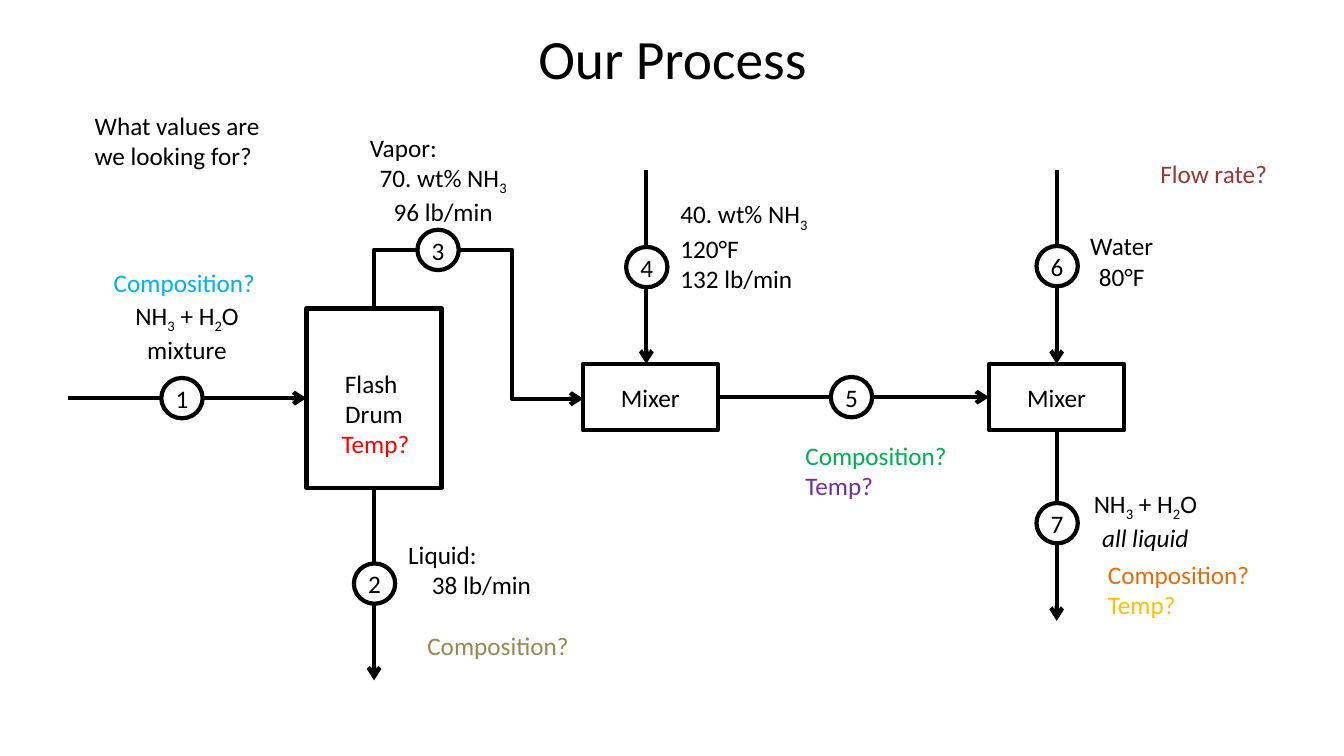
from dataclasses import dataclass
from typing import Any, NamedTuple, Optional

from lxml.etree import SubElement
from pptx import Presentation
from pptx.dml.color import RGBColor
from pptx.enum.shapes import MSO_CONNECTOR as Connector, MSO_SHAPE as Preset
from pptx.enum.text import MSO_ANCHOR as Anchor, MSO_AUTO_SIZE as AutoSize, PP_ALIGN as Align
from pptx.oxml.ns import qn
from pptx.util import Emu, Pt

EMU_PER_PX = 9144


@dataclass(frozen=True)
class Theme:
    font: str = "Calibri"
    title_size: float = 39.6
    body_size: float = 18
    line_width: float = 3
    ink: str = "000000"
    paper: str = "FFFFFF"
    red: str = "FF0000"
    blue: str = "00B0F0"
    green: str = "00B050"
    purple: str = "7030A0"
    orange: str = "E46C0A"
    gold: str = "FFC000"
    tan: str = "948A54"
    maroon: str = "953735"


THEME = Theme()


class Box(NamedTuple):
    left: int
    top: int
    width: int
    height: int


class Point(NamedTuple):
    x: int
    y: int


@dataclass(frozen=True)
class Line:
    normal_then_subscript: tuple[str, ...]
    color: str = THEME.ink
    align: Align = Align.LEFT
    italic: bool = False


@dataclass(frozen=True)
class Unit:
    name: str
    box: Box
    lines: tuple[Line, ...]


@dataclass(frozen=True)
class Stream:
    start: Point
    end: Point
    source: Optional[tuple[str, int]] = None
    target: Optional[tuple[str, int]] = None


@dataclass(frozen=True)
class Note:
    box: Box
    lines: tuple[Line, ...]


def centred(*pieces: str, italic: bool = False) -> Line:
    return Line(pieces, align=Align.CENTER, italic=italic)


def left(*pieces: str, color: str = THEME.ink) -> Line:
    return Line(pieces, color=color)


COMPOSITION, TEMP = "Composition?", "Temp?"
AMMONIA_WATER = centred("NH", "3", " + H", "2", "O")

UNITS = (
    Unit("drum", Box(304, 306, 134, 178), (centred("Flash "), centred("Drum"))),
    Unit("first mixer", Box(578, 361, 134, 66), (centred("Mixer"),)),
    Unit("second mixer", Box(981, 361, 134, 66), (centred("Mixer"),)),
)
STREAMS = (
    Stream(Point(67, 395), Point(304, 395), target=("drum", 1)),
    Stream(Point(371, 484), Point(371, 675), source=("drum", 2)),
    Stream(Point(641, 169), Point(641, 361)),
    Stream(Point(712, 394), Point(981, 394), ("first mixer", 3), ("second mixer", 1)),
    Stream(Point(1048, 169), Point(1048, 361), target=("second mixer", 0)),
    Stream(Point(1048, 427), Point(1048, 616), source=("second mixer", 2)),
)
VAPOR_BOX = Box(430, 247, 89, 208)
VAPOR_BENDS = {"adj1": -65900, "adj2": 66000}
BUBBLE_SIZE = (41, 40)
BUBBLE_CENTRES = (
    Point(180, 395), Point(371, 579), Point(434, 248), Point(641, 265),
    Point(844, 394), Point(1048, 264), Point(1048, 519),
)
NOTES = (
    Note(Box(103, 293, 165, 71), (AMMONIA_WATER, centred("mixture"))),
    Note(Box(357, 126, 165, 101),
         (left("Vapor:"), centred("70. wt% NH", "3"), centred("96 lb/min"))),
    Note(Box(395, 530, 165, 71), (left("Liquid:"), centred("38 lb/min"))),
    Note(Box(665, 192, 165, 101), (left("40. wt% NH", "3"), left("120°F"), left("132 lb/min"))),
    Note(Box(1069, 224, 87, 71), (centred("Water"), centred("80°F"))),
    Note(Box(1061, 479, 150, 71), (AMMONIA_WATER, centred("all liquid", italic=True))),
    Note(Box(84, 104, 202, 71), (left("What values are we looking for?"),)),
    Note(Box(329, 420, 92, 40), (left(TEMP, color=THEME.red),)),
    Note(Box(103, 260, 177, 40), (left(COMPOSITION, color=THEME.blue),)),
    Note(Box(789, 432, 177, 71),
         (left(COMPOSITION, color=THEME.green), left(TEMP, color=THEME.purple))),
    Note(Box(1089, 550, 177, 71),
         (left(COMPOSITION, color=THEME.orange), left(TEMP, color=THEME.gold))),
    Note(Box(414, 620, 177, 40), (left(COMPOSITION, color=THEME.tan),)),
    Note(Box(1141, 152, 177, 40), (left("Flow rate?", color=THEME.maroon),)),
)


def px(value: int) -> Emu:
    return Emu(value * EMU_PER_PX)


def apply(target: Any, values: dict[str, Any]) -> None:
    for name, value in values.items():
        setattr(target, name, value)


def write(frame: Any, lines: tuple[Line, ...], size: float = THEME.body_size) -> None:
    for index, line in enumerate(lines):
        paragraph = frame.add_paragraph() if index else frame.paragraphs[0]
        paragraph.alignment = line.align
        for position, piece in enumerate(line.normal_then_subscript):
            run = paragraph.add_run()
            run.text = piece
            apply(run.font, {"name": THEME.font, "size": Pt(size), "italic": line.italic})
            run.font.color.rgb = RGBColor.from_string(line.color)
            if position % 2:
                run.font._element.set("baseline", "-25000")


def style_line(item: Any) -> None:
    item.line.color.rgb = RGBColor.from_string(THEME.ink)
    item.line.width = Pt(THEME.line_width)


def draw_shape(slide: Any, preset: Preset, box: Box, lines: tuple[Line, ...], filled: bool) -> Any:
    shape = slide.shapes.add_shape(preset, *map(px, box))
    shape.shadow.inherit = False
    if filled:
        shape.fill.solid()
        shape.fill.fore_color.rgb = RGBColor.from_string(THEME.paper)
    else:
        shape.fill.background()
    style_line(shape)
    apply(shape.text_frame, {
        "margin_left": 0, "margin_right": 0, "margin_top": 0, "margin_bottom": 0,
        "word_wrap": False, "vertical_anchor": Anchor.MIDDLE,
    })
    write(shape.text_frame, lines)
    return shape


def draw_arrow(slide: Any, kind: Connector, start: Point, end: Point) -> Any:
    connector = slide.shapes.add_connector(kind, *map(px, (*start, *end)))
    style_line(connector)
    properties = connector._element.spPr
    SubElement(properties.find(qn("a:ln")), qn("a:tailEnd"), type="arrow")
    SubElement(properties, qn("a:effectLst"))
    return connector


def draw_stream(slide: Any, stream: Stream, units: dict[str, Any]) -> None:
    connector = draw_arrow(slide, Connector.STRAIGHT, stream.start, stream.end)
    for join, site in ((connector.begin_connect, stream.source),
                       (connector.end_connect, stream.target)):
        if site:
            join(units[site[0]], site[1])


def draw_vapor_stream(slide: Any) -> None:
    box = VAPOR_BOX
    end = Point(box.left + box.width, box.top + box.height)
    connector = draw_arrow(slide, Connector.ELBOW, Point(box.left, box.top), end)
    properties = connector._element.spPr
    for name, value in {"rot": "16200000", "flipH": "1"}.items():
        properties.find(qn("a:xfrm")).set(name, value)
    geometry = properties.find(qn("a:prstGeom"))
    geometry.set("prst", "bentConnector4")
    guides = geometry.find(qn("a:avLst"))
    for name, value in VAPOR_BENDS.items():
        SubElement(guides, qn("a:gd"), name=name, fmla=f"val {value}")


def draw_note(slide: Any, note: Note) -> None:
    frame = slide.shapes.add_textbox(*map(px, note.box)).text_frame
    apply(frame, {"word_wrap": True, "auto_size": AutoSize.SHAPE_TO_FIT_TEXT})
    write(frame, note.lines)


def main() -> None:
    presentation = Presentation()
    apply(presentation, {"slide_width": px(1333), "slide_height": px(750)})
    slide = presentation.slides.add_slide(presentation.slide_layouts[5])
    title = slide.shapes.title
    apply(title, dict(zip(("left", "top", "width", "height"), map(px, (67, 30, 1200, 54)))))
    apply(title.text_frame, {"vertical_anchor": Anchor.MIDDLE, "auto_size": AutoSize.NONE})
    write(title.text_frame, (centred("Our Process"),), THEME.title_size)
    units = {unit.name: draw_shape(slide, Preset.RECTANGLE, unit.box, unit.lines, False)
             for unit in UNITS}
    for stream in STREAMS:
        draw_stream(slide, stream, units)
    draw_vapor_stream(slide)
    width, height = BUBBLE_SIZE
    for number, centre in enumerate(BUBBLE_CENTRES, 1):
        box = Box(centre.x - width // 2, centre.y - height // 2, width, height)
        draw_shape(slide, Preset.OVAL, box, (centred(str(number)),), True)
    for note in NOTES:
        draw_note(slide, note)
    presentation.save("out.pptx")


if __name__ == "__main__":
    main()
